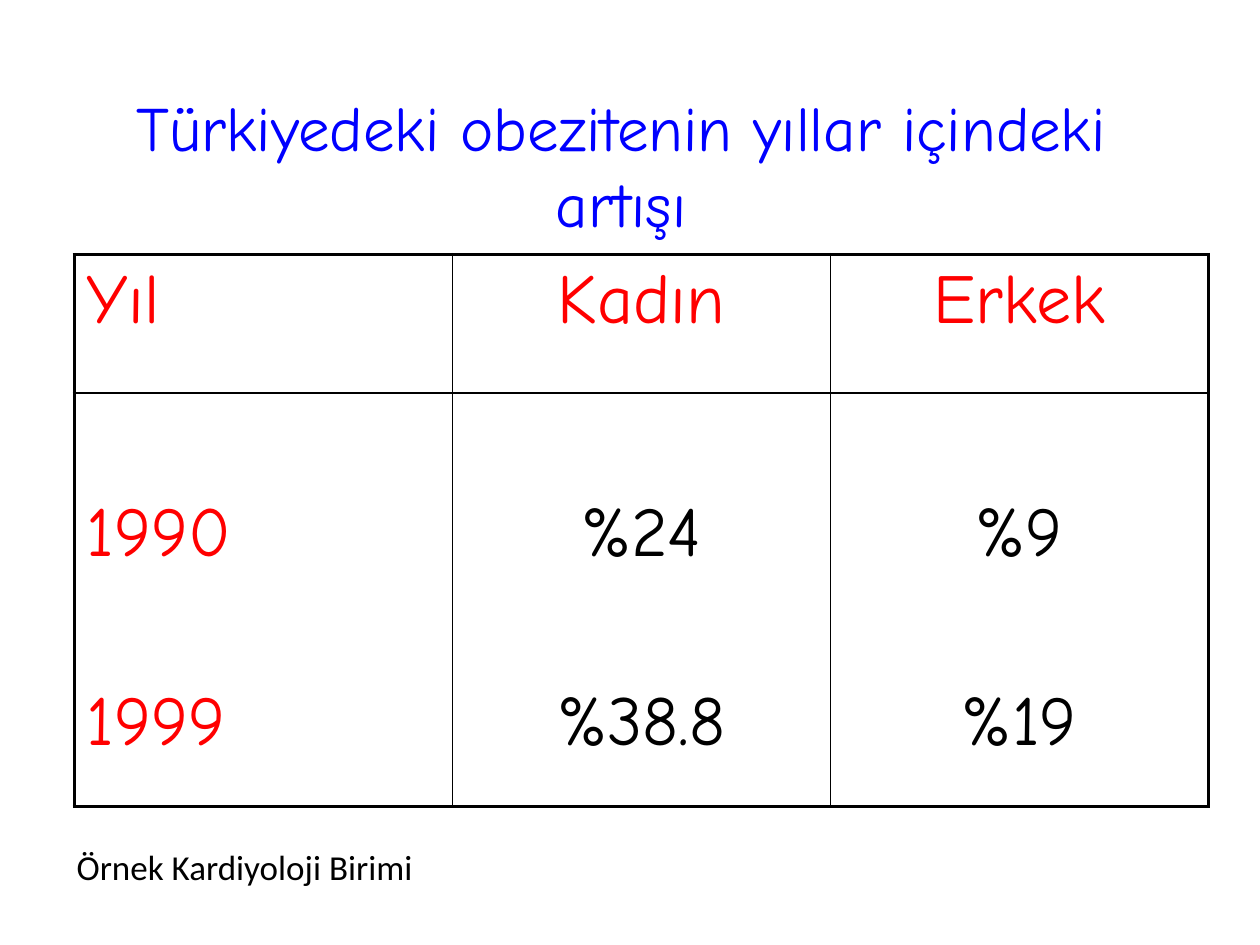
from lxml import etree
from pptx import Presentation
from pptx.dml.color import RGBColor
from pptx.enum.text import MSO_ANCHOR, MSO_AUTO_SIZE, PP_ALIGN
from pptx.oxml.ns import qn
from pptx.util import Inches, Pt

BLUE = RGBColor(0x00, 0x00, 0xFF)
RED = RGBColor(0xFF, 0x00, 0x00)
BLACK = RGBColor(0x00, 0x00, 0x00)
HEADING_FONT = "Comic Neue"
SOURCE_FONT = "Calibri"

HEADINGS = ["Yıl", "Kadın", "Erkek"]
COLUMNS = [["1990", "1999"], ["%24", "%38.8"], ["%9", "%19"]]
ROW_HEIGHTS = [1.1, 3.28]
OUTER_LINE, INNER_LINE = Pt(2.25), Pt(1)


def write_text(frame, *lines, size, color, font=HEADING_FONT,
               align=PP_ALIGN.LEFT, gap=0):
    """Write one paragraph per line, with gap points between them."""
    for index, line in enumerate(lines):
        paragraph = frame.paragraphs[0] if index == 0 else frame.add_paragraph()
        paragraph.alignment = align
        paragraph.space_before = Pt(gap if index else 0)
        run = paragraph.add_run()
        run.text = line
        run.font.size = Pt(size)
        run.font.name = font
        run.font.color.rgb = color


def place(shape, left, top, width, height):
    shape.left, shape.top = Inches(left), Inches(top)
    shape.width, shape.height = Inches(width), Inches(height)


def set_borders(cell, **widths):
    """Draw black cell borders; sides come in the order L, R, T, B."""
    properties = cell._tc.get_or_add_tcPr()
    for index, (side, width) in enumerate(widths.items()):
        line = etree.Element(qn(f"a:ln{side}"), w=str(width))
        fill = etree.SubElement(line, qn("a:solidFill"))
        etree.SubElement(fill, qn("a:srgbClr"), val=str(BLACK))
        properties.insert(index, line)


def add_title(slide, *box):
    title = slide.shapes.title
    place(title, *box)
    frame = title.text_frame
    frame.word_wrap = True
    frame.auto_size = MSO_AUTO_SIZE.NONE
    frame.vertical_anchor = MSO_ANCHOR.MIDDLE
    write_text(frame, "Türkiyedeki obezitenin yıllar içindeki artışı",
               size=36, color=BLUE, align=PP_ALIGN.CENTER)


def add_obesity_table(slide, left, top, width, height):
    table = slide.shapes.add_table(
        len(ROW_HEIGHTS), len(HEADINGS), Inches(left), Inches(top),
        Inches(width), Inches(height)).table
    table.first_row = table.horz_banding = False
    for row, row_height in zip(table.rows, ROW_HEIGHTS):
        row.height = Inches(row_height)

    last = len(HEADINGS) - 1
    for index, (heading, values) in enumerate(zip(HEADINGS, COLUMNS)):
        table.columns[index].width = Inches(width / len(HEADINGS))
        align = PP_ALIGN.CENTER if index else PP_ALIGN.LEFT
        head, body = table.cell(0, index), table.cell(1, index)
        write_text(head.text_frame, heading, size=40, color=RED, align=align)
        write_text(body.text_frame, *values, size=40, align=align, gap=62,
                   color=BLACK if index else RED)
        body.margin_top = Inches(0.8)
        for cell in (head, body):
            cell.fill.background()
            set_borders(cell,
                        L=INNER_LINE if index else OUTER_LINE,
                        R=OUTER_LINE if index == last else INNER_LINE,
                        T=OUTER_LINE if cell is head else INNER_LINE,
                        B=INNER_LINE if cell is head else OUTER_LINE)


def add_source(slide, *box):
    source = slide.shapes.add_textbox(*map(Inches, box))
    source.text_frame.word_wrap = True
    write_text(source.text_frame, "Örnek Kardiyoloji Birimi",
               size=20, color=BLACK, font=SOURCE_FONT)


def main():
    presentation = Presentation()
    presentation.slide_width = Inches(10)
    presentation.slide_height = Inches(7.5)
    slide = presentation.slides.add_slide(presentation.slide_layouts[5])
    add_title(slide, 0.43, 0.68, 9, 1.25)
    add_obesity_table(slide, 0.59, 2.02, 9, sum(ROW_HEIGHTS))
    add_source(slide, 0.51, 6.66, 9.06, 0.43)
    presentation.save("out.pptx")


if __name__ == "__main__":
    main()
